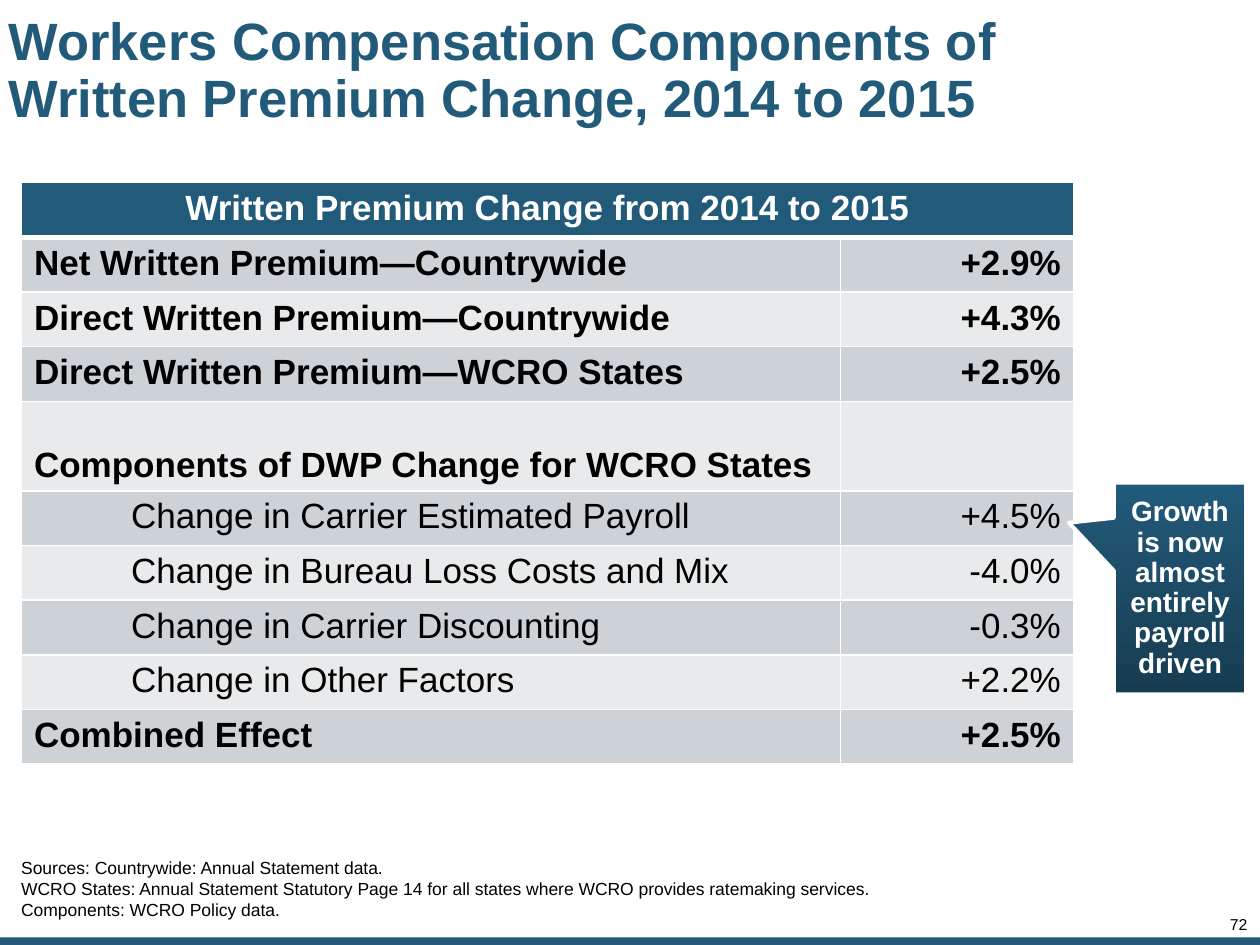
"""Build the slide on workers compensation written premium change."""
from dataclasses import dataclass

from lxml import etree
from pptx import Presentation
from pptx.dml.color import RGBColor
from pptx.enum.shapes import MSO_SHAPE
from pptx.enum.text import MSO_ANCHOR, PP_ALIGN
from pptx.oxml.ns import qn
from pptx.util import Inches, Pt

RECTANGLE, CALLOUT = MSO_SHAPE.RECTANGLE, MSO_SHAPE.RECTANGULAR_CALLOUT
TOP, MIDDLE, BOTTOM = MSO_ANCHOR.TOP, MSO_ANCHOR.MIDDLE, MSO_ANCHOR.BOTTOM
LEFT, CENTER, RIGHT = PP_ALIGN.LEFT, PP_ALIGN.CENTER, PP_ALIGN.RIGHT


@dataclass(frozen=True)
class Theme:
    font: str = "Arial"
    blue: str = "225A7A"
    navy: str = "173C51"
    white: str = "FFFFFF"
    black: str = "000000"
    bands: tuple = ("CDD2D7", "E8EAEC")
    title: int = 30
    table: int = 20
    callout: int = 16
    source: int = 10
    number: int = 9


THEME = Theme()
presentation = Presentation()
presentation.slide_width, presentation.slide_height = Inches(10), Inches(7.5)
COLUMN = presentation.slide_width // 100
ROW = presentation.slide_height // 75
slide = presentation.slides.add_slide(presentation.slide_layouts[6])


def area(left, top, width, height):
    return round(left * COLUMN), round(top * ROW), round(width * COLUMN), round(height * ROW)


def write(frame, text, size, color, bold=False, align=LEFT, spacing=1.0):
    frame.text = text
    for paragraph in frame.paragraphs:
        paragraph.alignment = align
        paragraph.line_spacing = spacing
        for run in paragraph.runs:
            run.font.name = THEME.font
            run.font.size = Pt(size)
            run.font.bold = bold
            run.font.color.rgb = RGBColor.from_string(color)


footer_bar = slide.shapes.add_shape(RECTANGLE, *area(0, 74.4, 100, 0.6))
footer_bar.shadow.inherit = False
footer_bar.fill.solid()
footer_bar.fill.fore_color.rgb = RGBColor.from_string(THEME.blue)
footer_bar.line.fill.background()

SOURCES = "\n".join((
    "Sources: Countrywide: Annual Statement data.",
    "WCRO States: Annual Statement Statutory Page 14 for all states "
    "where WCRO provides ratemaking services.",
    "Components: WCRO Policy data.",
))
TITLE = "Workers Compensation Components of Written Premium Change, 2014 to 2015"
TEXTS = (
    (TITLE, (0.2, 1, 85, 9.4), (0.05, 0.05), MIDDLE,
     (THEME.title, THEME.blue, True, LEFT, 0.9)),
    (SOURCES, (0.7, 67.5, 91.7, 6.1), (0.1, 0.05), TOP,
     (THEME.source, THEME.black)),
    ("72", (94.1, 72.8, 4.9, 1.3), (0, 0), TOP,
     (THEME.number, THEME.black, False, RIGHT, 0.85)),
)
for text, place, (side, edge), anchor, style in TEXTS:
    frame = slide.shapes.add_textbox(*area(*place)).text_frame
    frame.word_wrap = True
    frame.vertical_anchor = anchor
    frame.margin_left = frame.margin_right = Inches(side)
    frame.margin_top = frame.margin_bottom = Inches(edge)
    write(frame, text, *style)

HEADER = "Written Premium Change from 2014 to 2015"
SECTION = "Components of DWP Change for WCRO States"
LINES = (
    (HEADER, ""),
    ("Net Written Premium—Countrywide", "+2.9%"),
    ("Direct Written Premium—Countrywide", "+4.3%"),
    ("Direct Written Premium—WCRO States", "+2.5%"),
    (SECTION, ""),
    ("Change in Carrier Estimated Payroll", "+4.5%"),
    ("Change in Bureau Loss Costs and Mix", "-4.0%"),
    ("Change in Carrier Discounting", "-0.3%"),
    ("Change in Other Factors", "+2.2%"),
    ("Combined Effect", "+2.5%"),
)
table = slide.shapes.add_table(len(LINES), 2, *area(1.7, 14.5, 83.5, 44)).table
table.columns[0].width, table.columns[1].width = 65 * COLUMN, round(18.5 * COLUMN)
for row, line in enumerate(LINES):
    header = row == 0
    component = line[0].startswith("Change")
    table.rows[row].height = round((7.1 if line[0] == SECTION else 4.1) * ROW)
    for column, text in enumerate(line):
        cell = table.cell(row, column)
        properties = cell._tc.get_or_add_tcPr()
        for side in "LRTB":
            thick = (row, side) in ((0, "B"), (1, "T"))
            border = etree.SubElement(properties, qn(f"a:ln{side}"), w=str(Pt(3 if thick else 1)))
            paint = etree.SubElement(border, qn("a:solidFill"))
            etree.SubElement(paint, qn("a:srgbClr"), val=THEME.white)
        cell.fill.solid()
        cell.fill.fore_color.rgb = RGBColor.from_string(
            THEME.blue if header else THEME.bands[(row - 1) % 2])
        cell.vertical_anchor = BOTTOM if line[0] == SECTION else TOP
        if component and column == 0:
            cell.margin_left = Inches(0.87)
        if text:
            write(cell.text_frame, text, THEME.table,
                  THEME.white if header else THEME.black, not component,
                  CENTER if header else (LEFT, RIGHT)[column])
table.cell(0, 0).merge(table.cell(0, 1))

callout = slide.shapes.add_shape(CALLOUT, *area(88.4, 38.3, 10.5, 16.8))
callout.shadow.inherit = False
callout.adjustments[0], callout.adjustments[1] = -0.84, -0.31
callout.fill.gradient()
callout.fill.gradient_angle = 270
for stop, color in zip(callout.fill.gradient_stops, (THEME.blue, THEME.navy)):
    stop.color.rgb = RGBColor.from_string(color)
callout.line.color.rgb = RGBColor.from_string(THEME.white)
callout.line.width = Pt(2.25)
frame = callout.text_frame
frame.word_wrap = True
frame.vertical_anchor = MIDDLE
frame.margin_left = frame.margin_right = frame.margin_top = frame.margin_bottom = Inches(0.1)
write(frame, "Growth is now almost entirely payroll driven",
      THEME.callout, THEME.white, True, CENTER, 0.9)

presentation.save("out.pptx")
